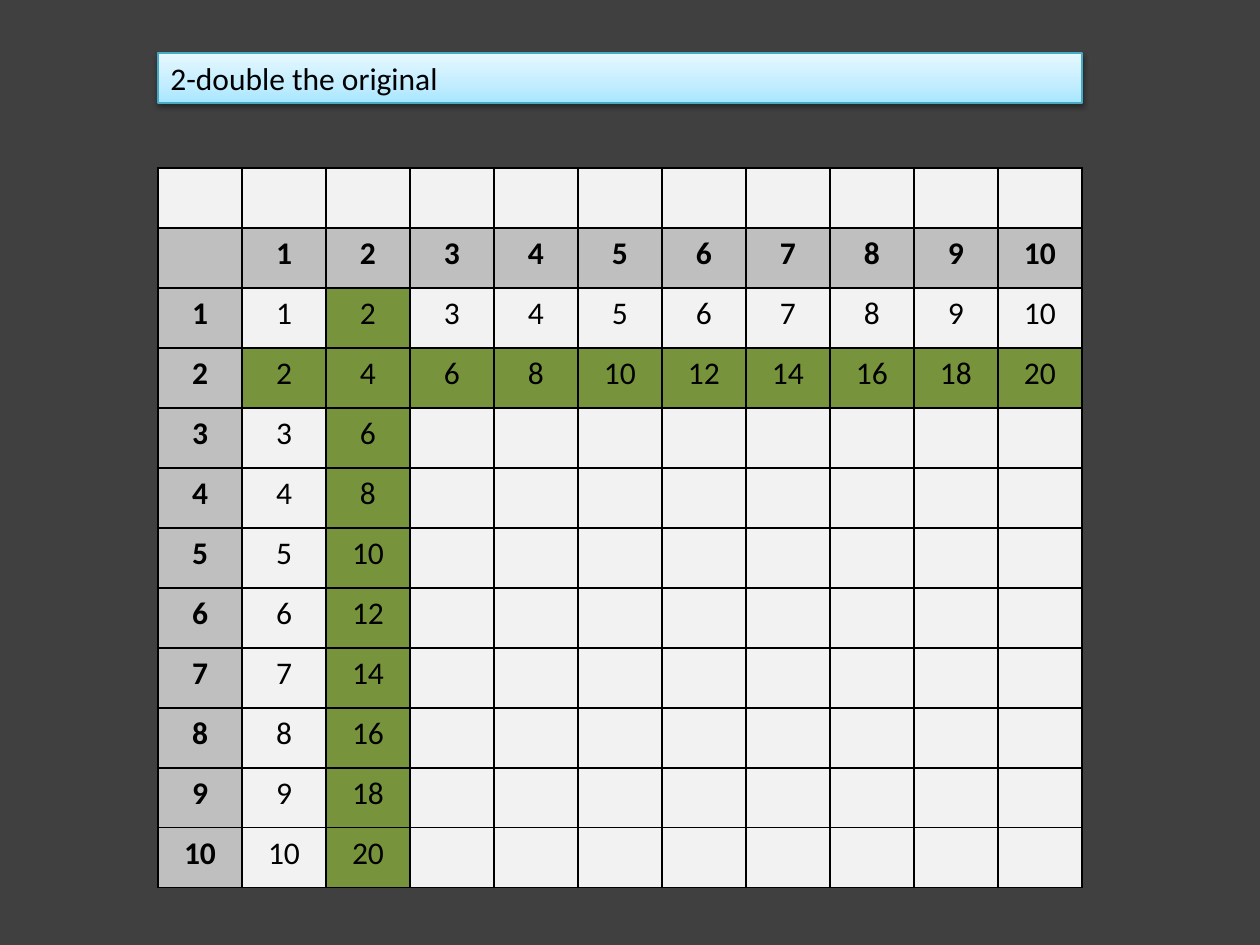
from lxml import etree
from pptx import Presentation
from pptx.dml.color import RGBColor
from pptx.enum.shapes import MSO_SHAPE
from pptx.enum.text import MSO_ANCHOR, MSO_AUTO_SIZE, PP_ALIGN
from pptx.oxml import parse_xml
from pptx.util import Pt

RECT = MSO_SHAPE.RECTANGLE
TOP = MSO_ANCHOR.TOP
GROW = MSO_AUTO_SIZE.SHAPE_TO_FIT_TEXT
LEFT, MID = PP_ALIGN.LEFT, PP_ALIGN.CENTER
NS = "http://schemas.openxmlformats.org/drawingml/2006/main"
PX = 914400 / 126

theme = {
    "font": "Calibri", "size": 18, "ink": "000000",
    "back": "404040", "plain": "F2F2F2", "head": "BFBFBF", "mark": "77933C",
    "edge": "46AAC5", "blend": [(0, "A7E6FF"), (35, "C1EDFF"), (100, "E7F8FF")],
}


def px(num):
    return round(num * PX)


def write(frame, text, align, bold=False):
    para = frame.paragraphs[0]
    para.alignment = align
    run = para.add_run()
    run.text = text
    run.font.name = theme["font"]
    run.font.size = Pt(theme["size"])
    run.font.bold = bold
    run.font.color.rgb = RGBColor.from_string(theme["ink"])


# Slide and background
deck = Presentation()
deck.slide_width, deck.slide_height = px(1260), px(945)
slide = deck.slides.add_slide(deck.slide_layouts[6])
slide.background.fill.solid()
slide.background.fill.fore_color.rgb = RGBColor.from_string(theme["back"])

# Times table: a blank row, a row of heads, then the products
LAST, TIMES = 10, 2
COL, ROW = 84, 60
cols, rows = LAST + 1, LAST + 2
grid = slide.shapes.add_table(
    rows, cols, px(158), px(168), px(cols * COL), px(rows * ROW)).table
grid.first_row = grid.horz_banding = False
for col in grid.columns:
    col.width = px(COL)
for row in grid.rows:
    row.height = px(ROW)

for y in range(rows):
    for x in range(cols):
        cell = grid.cell(y, x)
        num = y - 1
        text, tone = "", "plain"
        head = y > 0 and (num == 0 or x == 0)
        if head:
            tone = "head"
            text = str(num or x) if num or x else ""
        elif num > 0:
            if TIMES in (num, x):
                tone = "mark"
            if num <= TIMES or x <= TIMES:
                text = str(num * x)
        cell.fill.solid()
        cell.fill.fore_color.rgb = RGBColor.from_string(theme[tone])
        if text:
            write(cell.text_frame, text, MID, head)

        # Thin border on all four sides
        props = cell._tc.get_or_add_tcPr()
        for spot, side in enumerate(("lnL", "lnR", "lnT", "lnB")):
            props.insert(spot, parse_xml(
                f'<a:{side} xmlns:a="{NS}" w="{Pt(1)}"><a:solidFill>'
                f'<a:srgbClr val="{theme["ink"]}"/></a:solidFill></a:{side}>'))

# Title bar
bar = slide.shapes.add_shape(RECT, px(158), px(53), px(cols * COL), px(50))
bar.line.color.rgb = RGBColor.from_string(theme["edge"])
bar.line.width = Pt(0.75)
frame = bar.text_frame
frame.word_wrap = True
frame.auto_size = GROW
frame.vertical_anchor = TOP
write(frame, "2-double the original", LEFT)

# Three-stop blend, rising from the bottom edge
bar.fill.gradient()
bar.fill.gradient_angle = 90
stops = bar._element.spPr.find(f".//{{{NS}}}gsLst")
for stop in list(stops):
    stops.remove(stop)
for part, tone in theme["blend"]:
    stop = etree.SubElement(stops, f"{{{NS}}}gs", pos=str(part * 1000))
    etree.SubElement(stop, f"{{{NS}}}srgbClr", val=tone)

# Soft shadow below the bar
bar.shadow.inherit = False
glow = bar._element.spPr.find(f"{{{NS}}}effectLst")
glow.append(parse_xml(
    f'<a:outerShdw xmlns:a="{NS}" blurRad="{Pt(3.1)}" dist="{Pt(1.6)}" '
    f'dir="5400000" rotWithShape="0"><a:srgbClr val="{theme["ink"]}">'
    '<a:alpha val="38000"/></a:srgbClr></a:outerShdw>'))

deck.save("out.pptx")
